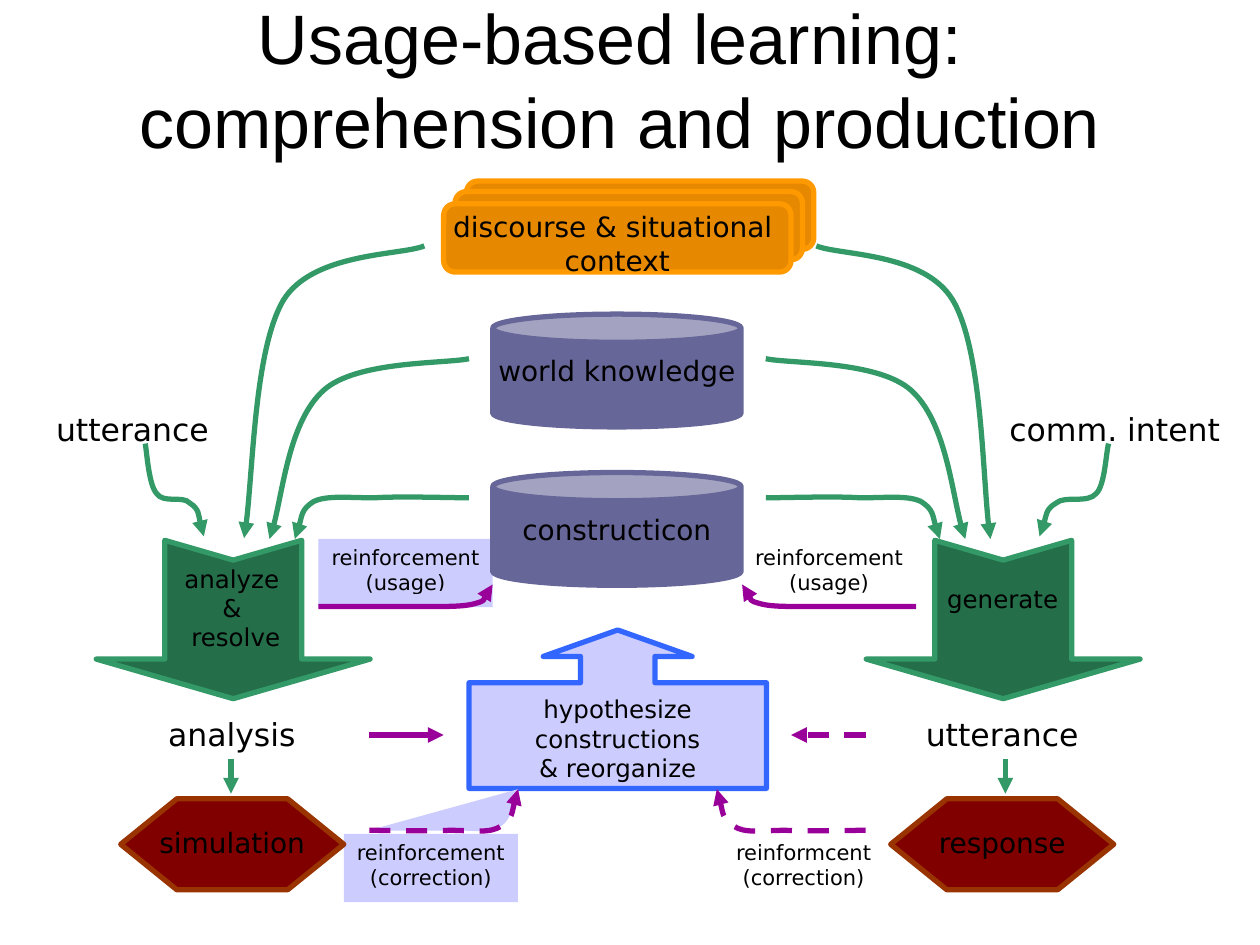
from lxml.etree import SubElement
from pptx import Presentation
from pptx.dml.color import RGBColor
from pptx.enum.dml import MSO_LINE
from pptx.enum.shapes import MSO_CONNECTOR, MSO_SHAPE
from pptx.enum.text import MSO_ANCHOR, PP_ALIGN
from pptx.oxml.ns import qn
from pptx.util import Pt

BLACK = RGBColor(0, 0, 0)
LILAC = RGBColor(0xCC, 0xCC, 0xFF)
BLUE = RGBColor(0x33, 0x66, 0xFF)
PURPLE = RGBColor(0x99, 0x00, 0x99)
SLATE = RGBColor(0x66, 0x66, 0x99)
GREEN = RGBColor(0x33, 0x99, 0x66)
FOREST = RGBColor(0x24, 0x6E, 0x49)
AMBER = RGBColor(0xE6, 0x89, 0x00)
ORANGE = RGBColor(0xFF, 0x99, 0x00)
MAROON = RGBColor(0x80, 0, 0)
RUST = RGBColor(0x99, 0x33, 0x00)

MIRROR = 705.6
SHIFT = 440
STROKE = 3

TITLE = "Usage-based learning: \vcomprehension and production"
NOTES = [
    ("reinforcement\n(usage)", 182, 308, LILAC),
    ("reinforcement\v(correction)", 196.5, 476.5, LILAC),
    ("reinforcement\n(usage)", 424, 308, None),
    ("reinformcent\n(correction)", 409.5, 476.5, None),
]
STORES = [("constructicon", 270), ("world knowledge", 179.5)]
CARDS = [("", 266.5, 103.5), ("", 260, 109.5),
         ("discourse & situational \vcontext", 253.5, 116.5)]
ENDS = ["simulation", "response"]
LABELS = [
    ("analysis", 40.5, 405.5, 184, 18, (6.5, 3, 6.5, 0)),
    ("utterance", 12, 231, 127.5, 18, (6.5, 3, 6.5, 0)),
    ("utterance", 509, 405.5, 127.5, 18, (6.5, 3, 6.5, 0)),
    ("comm. intent", 566, 231, 142, 18, (6.5, 3, 6.5, 0)),
    ("analyze \v& \vresolve", 78, 318.5, 113.5, 14, (7.2, 3.6, 7.2, 3.6)),
    ("generate", 534, 330, 78, 14, (7.2, 3.6, 7.2, 3.6)),
]

USAGE = [(182, 346.5), (191.5, 346.5), (222, 346.5), (237, 346.5), (251, 346.5),
         (263.5, 347), (271, 345), (278.5, 343), (279.5, 336), (281.5, 334)]
CORRECT = [(211, 474.5), (219, 474.5), (245, 475), (257, 474.5), (270, 474.5),
           (280, 476.5), (286.5, 472), (293, 468), (294.5, 455), (296, 451)]
WORLD = [(268, 205), (254, 208), (204, 206), (185, 223),
         (165.5, 240.5), (160.5, 291), (154, 308)]
GRAMMAR = [(268, 284.5), (258.5, 284.5), (228, 283.5), (214, 284.5), (199, 284.5),
           (187, 283), (179.5, 286.5), (172, 291), (170.5, 304), (168.5, 308)]
CONTEXT = [
    [(242.5, 140.5), (229.5, 146), (179, 144), (162, 171.5),
     (145.5, 199.5), (144.5, 279.5), (139.5, 307.5)],
    [(466.5, 140.5), (479.5, 146), (528, 144), (544.5, 171.5),
     (561, 199.5), (561.5, 280), (566, 308)],
]
INPUT = [
    [(83, 253.5), (84, 258.5), (85, 277), (89.5, 282), (93.5, 288),
     (104.5, 283), (108.5, 287.5), (114, 291), (115, 302.5), (116.5, 306.5)],
    [(633.5, 253.5), (632, 258.5), (631.5, 277), (626.5, 282), (621.5, 288),
     (608.5, 283), (603.5, 287.5), (597.5, 291), (596, 302.5), (594, 306.5)],
]

deck = Presentation()
deck.slide_width, deck.slide_height = Pt(720), Pt(540)
slide = deck.slides.add_slide(deck.slide_layouts[6])
shapes = slide.shapes


def write(shape, text, size, inset=(0, 6.5, 0, 0), face="DejaVu Sans",
          anchor=MSO_ANCHOR.TOP):
    frame = shape.text_frame
    frame.word_wrap = True
    frame.vertical_anchor = anchor
    (frame.margin_left, frame.margin_top,
     frame.margin_right, frame.margin_bottom) = map(Pt, inset)
    frame.text = text
    for para in frame.paragraphs:
        para.alignment = PP_ALIGN.CENTER
        para.font.size = Pt(size)
        para.font.name = face
        para.font.color.rgb = BLACK


def paint(shape, fill, line):
    shape.shadow.inherit = False
    if fill is None:
        shape.fill.background()
    else:
        shape.fill.solid()
        shape.fill.fore_color.rgb = fill
    if line is None:
        shape.line.fill.background()
    else:
        shape.line.color.rgb = line
        shape.line.width = Pt(STROKE)


def box(kind, left, top, width, height, fill, line=None, adjust=()):
    shape = shapes.add_shape(kind, Pt(left), Pt(top), Pt(width), Pt(height))
    for i, value in enumerate(adjust):
        shape.adjustments[i] = value
    paint(shape, fill, line)
    return shape


def label(text, left, top, width, height, size, *style):
    shape = shapes.add_textbox(Pt(left), Pt(top), Pt(width), Pt(height))
    write(shape, text, size, *style)


def point(shape, dash):
    if dash:
        shape.line.dash_style = MSO_LINE.DASH
    SubElement(shape.line._get_or_add_ln(), qn("a:tailEnd"), type="triangle")


def curve(points, line, fill=None, dash=False):
    spots = [(Pt(x), Pt(y)) for x, y in points]
    pen = shapes.build_freeform(*spots[0])
    pen.add_line_segments(spots[1:], close=False)
    shape = pen.convert_to_shape()
    track = next(shape._element.iter(qn("a:path")))
    steps = track.findall(qn("a:lnTo"))
    for i in range(0, len(steps), 3):
        bend = SubElement(track, qn("a:cubicBezTo"))
        for step in steps[i:i + 3]:
            bend.append(step[0])
            track.remove(step)
    paint(shape, fill, line)
    point(shape, dash)


def arrow(start, end, color, dash=False):
    link = shapes.add_connector(MSO_CONNECTOR.STRAIGHT, *map(Pt, start + end))
    link.line.color.rgb = color
    link.line.width = Pt(STROKE)
    point(link, dash)
    SubElement(link._element.spPr, qn("a:effectLst"))


def flip(points):
    return [(MIRROR - x, y) for x, y in points]


label(TITLE, 30, 0, 648, 90, 40, (7.2, 3.6, 7.2, 3.6), "Arial", MSO_ANCHOR.MIDDLE)

for text, left, top, fill in NOTES:
    if fill is None:
        label(text, left, top, 99.5, 39, 12, (0, 3, 0, 0))
    else:
        note = box(MSO_SHAPE.RECTANGLE, left, top, 99.5, 39, fill)
        write(note, text, 12, (0, 3, 0, 0))

call = box(MSO_SHAPE.UP_ARROW_CALLOUT, 268, 360, 170, 90.5, LILAC, BLUE,
           (0.47, 0.47, 0.167, 0.667))
write(call, "hypothesize constructions\n& reorganize", 14)

curve(USAGE, PURPLE, LILAC)
curve(flip(USAGE), PURPLE)
curve(CORRECT, PURPLE, LILAC, True)
curve(flip(CORRECT), PURPLE, dash=True)
arrow((211, 420), (253.5, 420), PURPLE)
arrow((MIRROR - 211, 420), (MIRROR - 253.5, 420), PURPLE, True)

for text, top in STORES:
    write(box(MSO_SHAPE.CAN, 281.5, top, 142, 64.5, SLATE, SLATE, (0.25,)), text, 16)

for side, text in enumerate(ENDS):
    move = side * SHIFT
    block = box(MSO_SHAPE.NOTCHED_RIGHT_ARROW, 88 + move, 275.75, 90.5, 156.5,
                FOREST, GREEN, (0.5, 0.25))
    block.rotation = 90
    for path in (WORLD, GRAMMAR):
        curve(flip(path) if side else path, GREEN)
    curve(CONTEXT[side], GREEN)
    curve(INPUT[side], GREEN)
    stem = 132 + side * 442.5
    arrow((stem, 433.5), (stem, 453.5), GREEN)
    end = box(MSO_SHAPE.HEXAGON, 69 + move, 456.5, 127.5, 52, MAROON, RUST, (0.617,))
    write(end, text, 16)

for text, left, top in CARDS:
    card = box(MSO_SHAPE.ROUNDED_RECTANGLE, left, top, 198.5, 39, AMBER, ORANGE, (0.167,))
    if text:
        write(card, text, 16, (0, 1.5, 0, 0))

for text, left, top, width, size, inset in LABELS:
    label(text, left, top, width, 26, size, inset)

deck.save("out.pptx")
